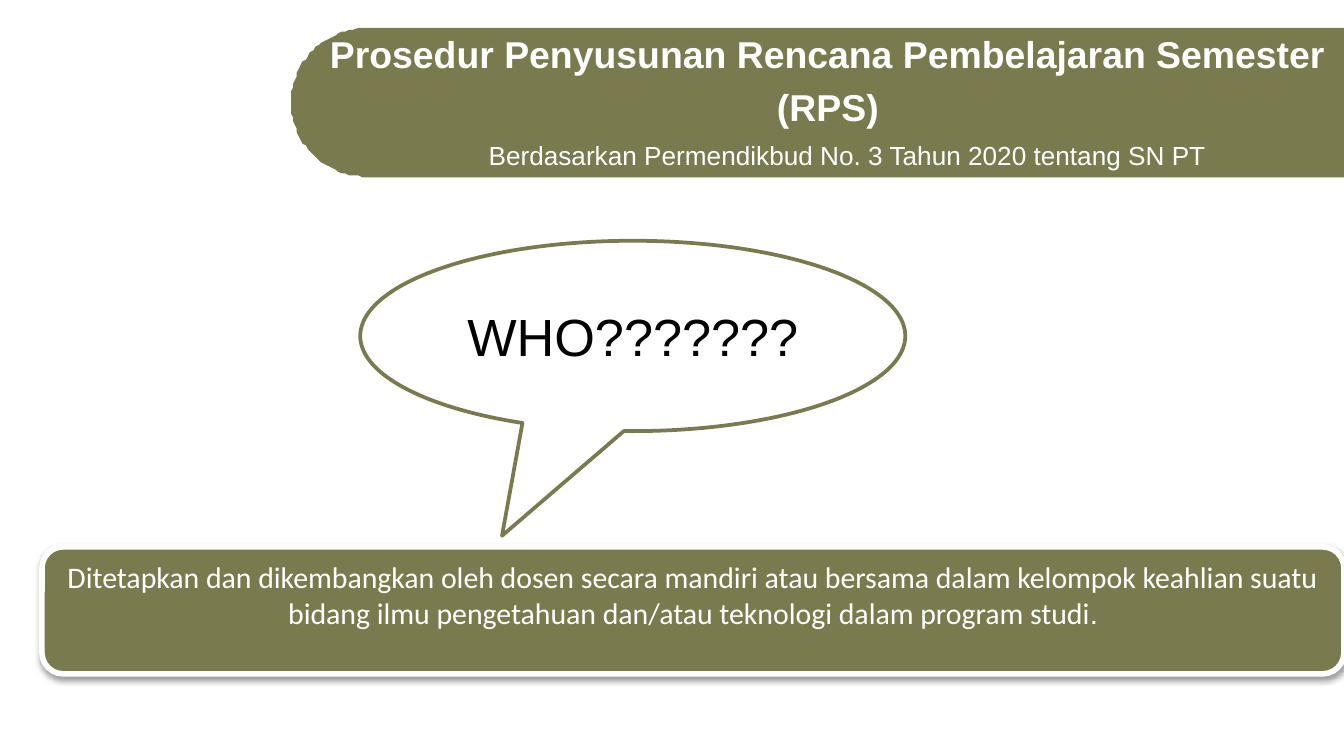
from math import cos, pi, sin
from lxml.etree import SubElement as Sub
from pptx import Presentation
from pptx.dml.color import RGBColor as Rgb
from pptx.enum.shapes import MSO_SHAPE as Kind
from pptx.enum.text import MSO_ANCHOR as Anchor, PP_ALIGN as Align
from pptx.oxml.ns import qn
from pptx.util import Pt

OLIVE, WHITE, BLACK = "797B4F", "FFFFFF", "000000"


def tint(target, code):
    target.fill.solid()
    target.fill.fore_color.rgb = Rgb.from_string(code)


def style(shape, fill, line=None, width=0):
    shape.shadow.inherit = False
    tint(shape, fill)
    if line:
        tint(shape.line, line)
        shape.line.width = Pt(width)
    else:
        shape.line.fill.background()


def write(shape, *lines, size, color=WHITE, font="Arial", bold=False,
          gap=0, anchor=Anchor.MIDDLE, top=3.6):
    frame = shape.text_frame
    frame.word_wrap = True
    frame.vertical_anchor = anchor
    frame.margin_top = Pt(top)
    for i, line in enumerate(lines):
        para = frame.add_paragraph() if i else frame.paragraphs[0]
        para.alignment = Align.CENTER
        para.space_before = Pt(gap if i else 0)
        for part, face in [(line, font)] if isinstance(line, str) else line:
            run = para.add_run()
            run.text = part
            run.font.name = face
            run.font.size = Pt(size)
            run.font.bold = bold
            tint(run.font, color)


def label(slide, box, *lines, **form):
    write(slide.shapes.add_textbox(*map(Pt, box)), *lines, **form)


def block(slide, kind, box, fill, line, width):
    shape = slide.shapes.add_shape(kind, *map(Pt, box))
    style(shape, fill, line, width)
    return shape


def banner(slide, left, top, right, high, steps=60):
    rad = high / 2
    arc = [(left + rad - rad * sin(pi * i / steps),
            top + rad + rad * cos(pi * i / steps)) for i in range(steps + 1)]
    pen = slide.shapes.build_freeform(right, top, scale=Pt(1))
    pen.add_line_segments([(right, top + high)] + arc, close=True)
    style(pen.convert_to_shape(), OLIVE)


def shade(shape, blur, dist, alpha):
    effect = shape._element.spPr.find(qn("a:effectLst"))
    outer = Sub(effect, qn("a:outerShdw"), blurRad=str(Pt(blur)),
                dist=str(Pt(dist)), dir="5400000", rotWithShape="0")
    color = Sub(outer, qn("a:srgbClr"), val=BLACK)
    Sub(color, qn("a:alpha"), val=str(alpha * 1000))


def main():
    deck = Presentation()
    deck.slide_width, deck.slide_height = Pt(720), Pt(405)
    slide = deck.slides.add_slide(deck.slide_layouts[6])

    banner(slide, 156, 15.2, 720, 79.4)
    label(slide, (167, 20, 553, 45.5),
          "Prosedur Penyusunan Rencana Pembelajaran Semester", "(RPS)",
          size=20, bold=True, gap=4.5)
    label(slide, (190, 72, 528, 22.5),
          "Berdasarkan Permendikbud No. 3 Tahun 2020 tentang SN PT", size=14)

    panel = block(slide, Kind.ROUNDED_RECTANGLE, (22.5, 293, 697.5, 68),
                  OLIVE, WHITE, 3)
    shade(panel, 3.1, 1.6, 38)
    write(panel, [("Ditetapkan dan dikembangkan oleh dosen secara mandiri atau "
                   "bersama dalam kelompok keahlian suatu bidang ilmu "
                   "pengetahuan dan/atau teknologi dalam program studi",
                   "Calibri"), (".", "Roboto Slab")],
          size=16, anchor=Anchor.TOP, top=3)

    bubble = block(slide, Kind.OVAL_CALLOUT, (193, 129, 292, 102),
                   WHITE, OLIVE, 2)
    bubble.adjustments[0], bubble.adjustments[1] = -0.24, 1.05
    write(bubble, "WHO???????", size=28, color=BLACK)

    deck.save("out.pptx")


if __name__ == "__main__":
    main()
